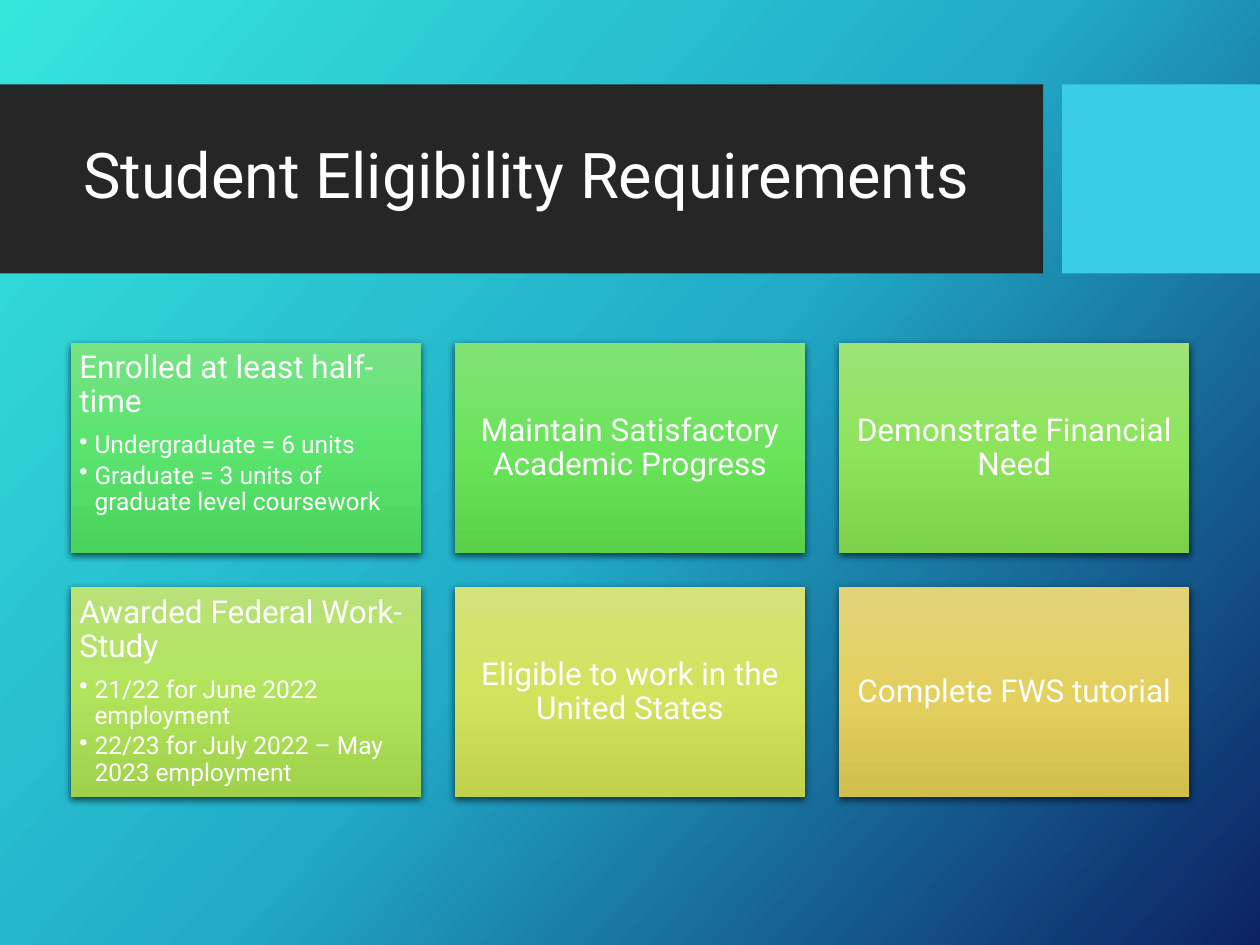
from dataclasses import dataclass

from lxml import etree
from pptx import Presentation
from pptx import util as u
from pptx.dml.color import RGBColor
from pptx.enum import shapes, text
from pptx.oxml.ns import qn

FONT = "Roboto"
COLORS = {"banner": "262626", "accent": "39CDE7", "text": "FFFFFF", "shadow": "000000"}
BACKDROP = ("36E6DD", "21ABC8", "0C2263")

# Card grid, in inches
COLUMNS = 3
MARGIN, TOP = 0.56, 2.72
CARD_W, CARD_H = 2.78, 1.67
GAP = (10 - 2 * MARGIN - COLUMNS * CARD_W) / (COLUMNS - 1)


@dataclass
class Requirement:
    heading: str
    gradient: tuple[str, str, str]
    details: tuple[str, ...] = ()


REQUIREMENTS = [
    Requirement("Enrolled at least half-time", ("77E385", "5AE46E", "49D25C"),
                ("Undergraduate = 6 units",
                 "Graduate = 3 units of graduate level coursework")),
    Requirement("Maintain Satisfactory Academic Progress", ("82E377", "6AE45B", "59D249")),
    Requirement("Demonstrate Financial Need", ("9DE378", "8EE45B", "7CD14A")),
    Requirement("Awarded Federal Work-Study", ("B9E279", "B1E45C", "9FD14B"),
                ("21/22 for June 2022 employment",
                 "22/23 for July 2022 – May 2023 employment")),
    Requirement("Eligible to work in the United States", ("D5E279", "D4E35D", "C1D14C")),
    Requirement("Complete FWS tutorial", ("E2D37A", "E3D05E", "D1BE4D")),
]


def add_color(parent, value: str):
    return etree.SubElement(parent, qn("a:srgbClr"), val=value)


def set_gradient(owner, stops: tuple[str, str, str], angle: int) -> None:
    """Fill a shape or background with evenly spaced stops, angle clockwise."""
    owner.fill.gradient()
    gradient = next(owner_element(owner).iter(qn("a:gradFill")))
    for child in list(gradient):
        gradient.remove(child)
    stop_list = etree.SubElement(gradient, qn("a:gsLst"))
    for i, value in enumerate(stops):
        add_color(etree.SubElement(stop_list, qn("a:gs"), pos=str(i * 50000)), value)
    etree.SubElement(gradient, qn("a:lin"), ang=str(angle * 60000), scaled="0")


def owner_element(owner):
    return owner.element if hasattr(owner, "element") else owner._element


def add_rect(slide, left: float, top: float, width: float, height: float):
    rect = slide.shapes.add_shape(shapes.MSO_SHAPE.RECTANGLE, u.Inches(left),
                                  u.Inches(top), u.Inches(width), u.Inches(height))
    rect.shadow.inherit = False
    rect.line.fill.background()
    return rect


def add_band(slide, left: float, width: float, color: str) -> None:
    band = add_rect(slide, left, 0.67, width, 1.5)
    band.fill.solid()
    band.fill.fore_color.rgb = RGBColor.from_string(color)


def add_shadow(card) -> None:
    effects = card.element.spPr.find(qn("a:effectLst"))
    shadow = etree.SubElement(effects, qn("a:outerShdw"), blurRad=str(u.Pt(4.5)),
                              dist=str(u.Pt(1.5)), dir="5400000", rotWithShape="0")
    etree.SubElement(add_color(shadow, COLORS["shadow"]), qn("a:alpha"), val="63000")


def style(paragraph, size: int, after: float, align) -> None:
    paragraph.alignment = align
    paragraph.line_spacing = 0.9
    paragraph.space_after = u.Pt(after)
    paragraph.font.name = FONT
    paragraph.font.size = u.Pt(size)
    paragraph.font.color.rgb = RGBColor.from_string(COLORS["text"])


def add_bullet(paragraph) -> None:
    props = paragraph._p.get_or_add_pPr()
    props.set("marL", str(u.Inches(0.12)))
    props.set("indent", str(u.Inches(-0.12)))
    etree.SubElement(props, qn("a:buChar"), char="•")


def add_card(slide, left: float, top: float, item: Requirement) -> None:
    card = add_rect(slide, left, top, CARD_W, CARD_H)
    set_gradient(card, item.gradient, 90)
    add_shadow(card)

    frame = card.text_frame
    frame.word_wrap = True
    frame.margin_left = frame.margin_right = u.Inches(0.07)
    frame.margin_top = frame.margin_bottom = u.Inches(0.07)
    if item.details:
        frame.vertical_anchor, align = text.MSO_ANCHOR.TOP, text.PP_ALIGN.LEFT
    else:
        frame.vertical_anchor, align = text.MSO_ANCHOR.MIDDLE, text.PP_ALIGN.CENTER

    heading = frame.paragraphs[0]
    heading.text = item.heading
    style(heading, 18, 7.5, align)
    for detail in item.details:
        bullet = frame.add_paragraph()
        bullet.text = detail
        bullet.level = 1
        add_bullet(bullet)
        style(bullet, 14, 2.1, align)


def add_title(slide, wording: str) -> None:
    title = slide.shapes.title
    title.left, title.top = u.Inches(0.56), u.Inches(0.82)
    title.width, title.height = u.Inches(7.89), u.Inches(1.18)
    title.text_frame.text = wording
    title.text_frame.vertical_anchor = text.MSO_ANCHOR.MIDDLE
    style(title.text_frame.paragraphs[0], 36, 0, text.PP_ALIGN.LEFT)
    # Bring the title in front of the bands
    slide.shapes.element.append(title.element)


def main() -> None:
    prs = Presentation()
    prs.slide_width, prs.slide_height = u.Inches(10), u.Inches(7.5)
    slide = prs.slides.add_slide(prs.slide_layouts[5])

    # Background and title banner
    slide.background.fill.gradient()
    set_gradient(slide.background, BACKDROP, 42) if hasattr(
        slide.background, "element") else None
    add_band(slide, 0, 8.28, COLORS["banner"])
    add_band(slide, 8.43, 1.57, COLORS["accent"])
    add_title(slide, "Student Eligibility Requirements")

    # Requirement cards, row by row
    for i, item in enumerate(REQUIREMENTS):
        row, column = divmod(i, COLUMNS)
        add_card(slide, MARGIN + column * (CARD_W + GAP),
                 TOP + row * (CARD_H + GAP), item)

    prs.save("out.pptx")


if __name__ == "__main__":
    main()
